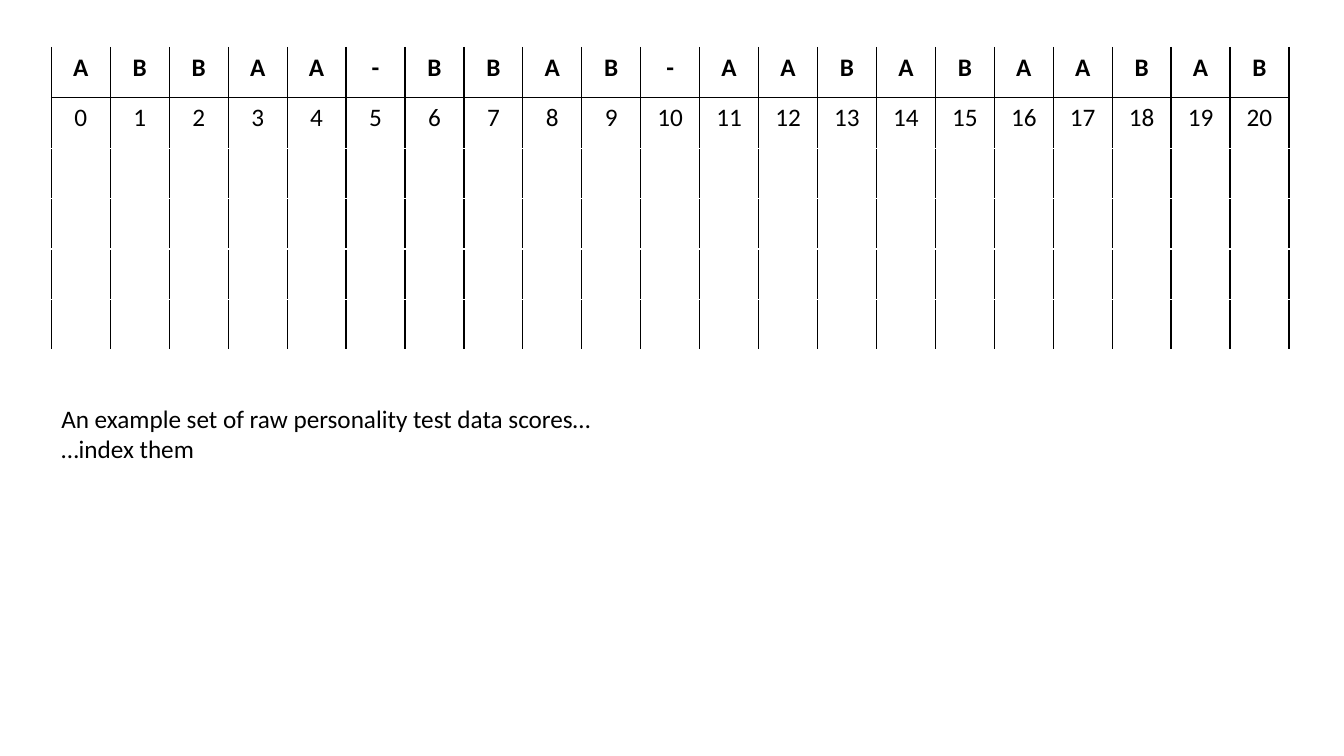
from dataclasses import dataclass

from lxml import etree
from pptx import Presentation
from pptx.dml.color import RGBColor
from pptx.enum.text import MSO_ANCHOR, PP_ALIGN
from pptx.oxml.ns import qn
from pptx.util import Pt

CENTER, LEFT, TOP = PP_ALIGN.CENTER, PP_ALIGN.LEFT, MSO_ANCHOR.TOP


@dataclass(frozen=True)
class Theme:
    ink: str = "000000"
    paper: str = "FFFFFF"
    font: str = "Calibri"
    size: int = 18
    rule: int = 1


THEME = Theme()
ANSWERS = "ABBAA-BBAB-AABABAABAB"
ROW_COUNT = 6
MARGIN, TABLE_TOP = 36.72, 33.84
COLUMN_WIDTH, ROW_HEIGHT = 42.1, 36


def write(paragraph, text, bold=False, align=LEFT):
    paragraph.alignment = align
    font = paragraph.font
    if text:
        run = paragraph.add_run()
        run.text = text
        font = run.font
    font.name = THEME.font
    font.size = Pt(THEME.size)
    font.bold = bold
    font.color.rgb = RGBColor.from_string(THEME.ink)


def set_borders(cell, **colors):
    """Draw cell borders; keys are L, R, T and B, in that order."""
    properties = cell._tc.get_or_add_tcPr()
    for position, (side, color) in enumerate(colors.items()):
        line = etree.Element(qn(f"a:ln{side}"), w=str(Pt(THEME.rule)))
        fill = etree.SubElement(line, qn("a:solidFill"))
        etree.SubElement(fill, qn("a:srgbClr"), val=color)
        properties.insert(position, line)


prs = Presentation()
prs.slide_width, prs.slide_height = Pt(960), Pt(540)
slide = prs.slides.add_slide(prs.slide_layouts[6])

# Answers over their indexes, with empty rows below
scores = slide.shapes.add_table(
    ROW_COUNT, len(ANSWERS), Pt(MARGIN), Pt(TABLE_TOP),
    Pt(COLUMN_WIDTH * len(ANSWERS)), Pt(ROW_HEIGHT * ROW_COUNT)).table
scores.horz_banding = False
for column in scores.columns:
    column.width = Pt(COLUMN_WIDTH)

for row_number, row in enumerate(scores.rows):
    row.height = Pt(ROW_HEIGHT)
    for index, cell in enumerate(row.cells):
        text = {0: ANSWERS[index], 1: str(index)}.get(row_number, "")
        write(cell.text_frame.paragraphs[0], text, bold=row_number == 0, align=CENTER)
        cell.vertical_anchor = TOP
        cell.fill.solid()
        cell.fill.fore_color.rgb = RGBColor.from_string(THEME.paper)
        set_borders(cell, L=THEME.ink, R=THEME.ink,
                    T=THEME.ink if row_number == 1 else THEME.paper,
                    B=THEME.ink if row_number == 0 else THEME.paper)

# Explanation
explanation = slide.shapes.add_textbox(Pt(MARGIN), Pt(284.4), Pt(509), Pt(72.7)).text_frame
explanation.word_wrap = True
write(explanation.paragraphs[0], "An example set of raw personality test data scores…")
write(explanation.add_paragraph(), "…index them")

prs.save("out.pptx")
